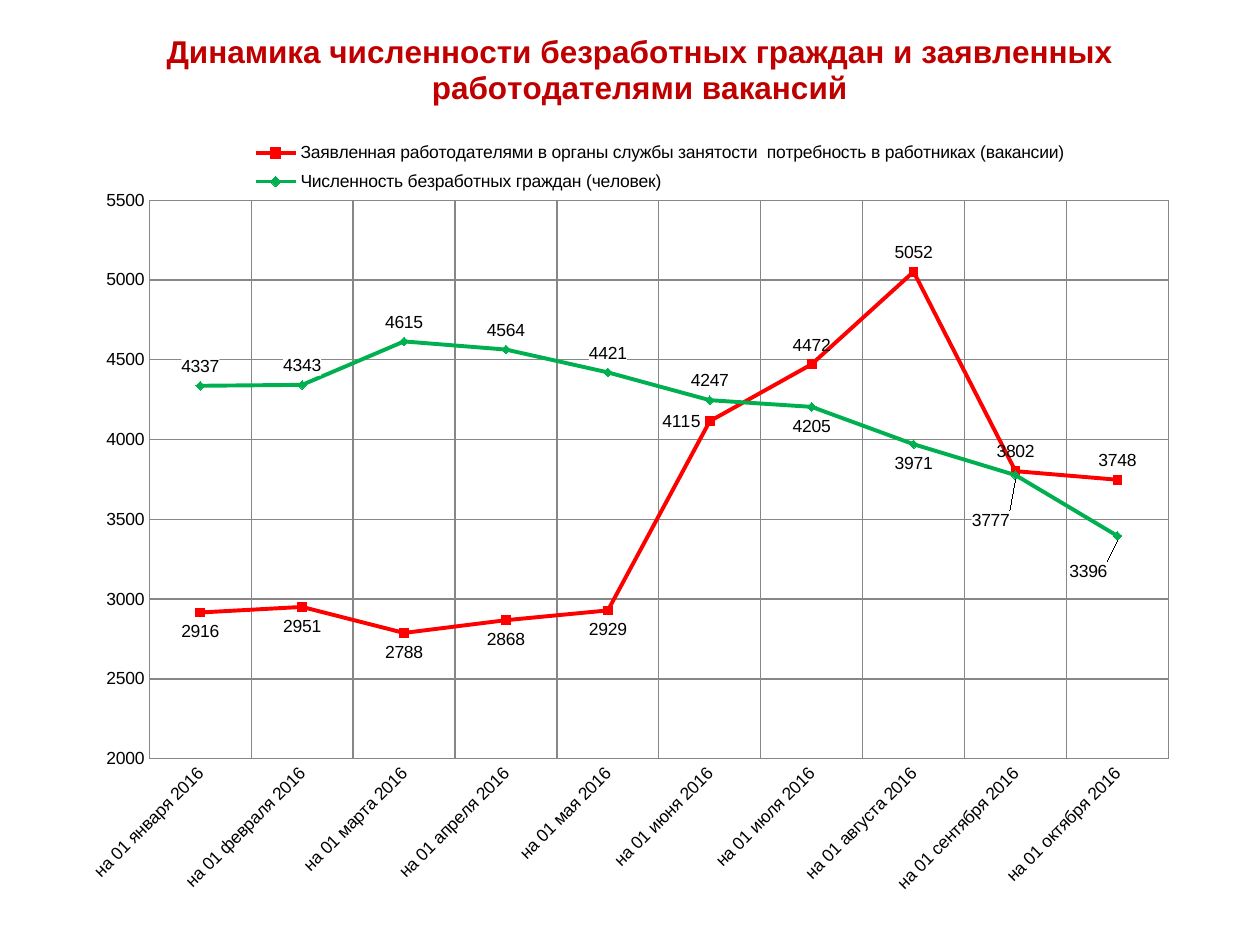
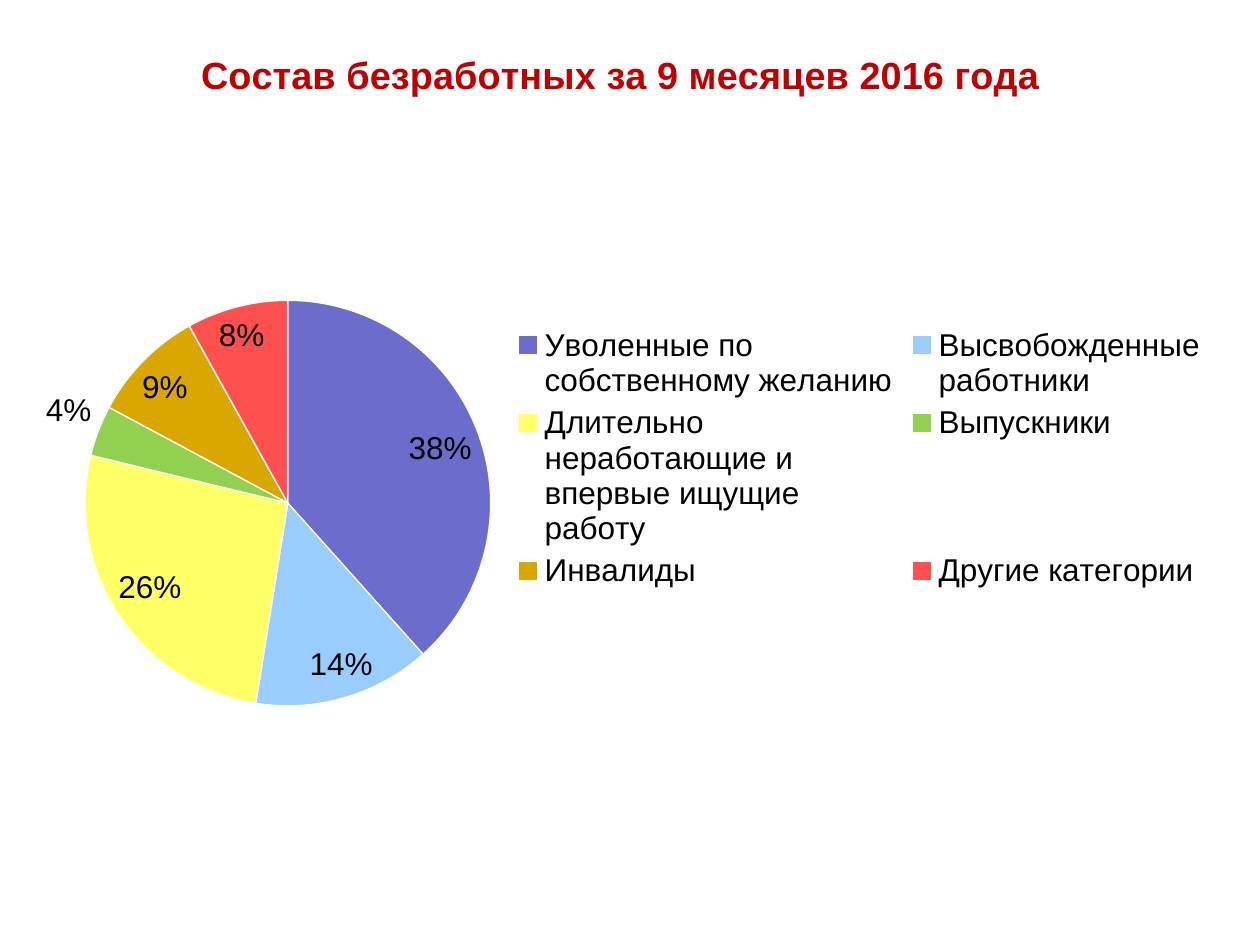
from lxml import etree
from pptx import Presentation
from pptx.chart.data import CategoryChartData
from pptx.dml.color import RGBColor
from pptx.enum.chart import XL_CHART_TYPE, XL_LABEL_POSITION, XL_LEGEND_POSITION, XL_MARKER_STYLE, XL_TICK_MARK
from pptx.oxml import parse_xml
from pptx.oxml.ns import nsdecls, qn
from pptx.util import Pt

LINE, PIE = XL_CHART_TYPE.LINE_MARKERS, XL_CHART_TYPE.PIE
ABOVE, BELOW, LEFT = XL_LABEL_POSITION.ABOVE, XL_LABEL_POSITION.BELOW, XL_LABEL_POSITION.LEFT
BEST_FIT = XL_LABEL_POSITION.BEST_FIT
LEGEND_RIGHT = XL_LEGEND_POSITION.RIGHT
SQUARE, DIAMOND = XL_MARKER_STYLE.SQUARE, XL_MARKER_STYLE.DIAMOND
NO_TICK = XL_TICK_MARK.NONE

FONT = "Arial"
BLACK = RGBColor(0x00, 0x00, 0x00)
WHITE = RGBColor(0xFF, 0xFF, 0xFF)
TITLE_RED = RGBColor(0xC0, 0x00, 0x00)
GRID_GRAY = RGBColor(0x87, 0x87, 0x87)
RED = RGBColor(0xFF, 0x00, 0x00)
GREEN = RGBColor(0x00, 0xB0, 0x50)
PIE_COLORS = [
    RGBColor(0x6C, 0x6C, 0xCC), RGBColor(0x99, 0xCC, 0xFF), RGBColor(0xFF, 0xFF, 0x66),
    RGBColor(0x92, 0xD0, 0x50), RGBColor(0xDA, 0xA6, 0x00), RGBColor(0xFF, 0x50, 0x50),
]
NO_LEADER_LINES = (
    f'<c:extLst {nsdecls("c")}><c:ext uri="{{CE6537A1-D6FC-4f65-9D91-7224C49458BB}}" '
    'xmlns:c15="http://schemas.microsoft.com/office/drawing/2012/chart">'
    '<c15:showLeaderLines val="0"/></c:ext></c:extLst>')

prs = Presentation()
prs.slide_width, prs.slide_height = Pt(720), Pt(540)


def set_layout(parent, index, percents, edge=True, inner=False):
    for old in parent.findall(qn("c:layout")):
        parent.remove(old)
    layout = parse_xml(f"<c:layout {nsdecls('c')}><c:manualLayout/></c:layout>")
    settings = [("layoutTarget", "inner")] if inner else []
    if edge:
        settings += [("xMode", "edge"), ("yMode", "edge")]
    settings += [(key, f"{percent / 100:.4f}") for key, percent in zip("xywh", percents)]
    for tag, value in settings:
        etree.SubElement(layout[0], qn(f"c:{tag}"), val=value)
    parent.insert(index, layout)


def add_chart_slide(kind, bounds, data, size, title_lines, title_size, title_at, plot_box):
    s = prs.slides.add_slide(prs.slide_layouts[6])
    chart = s.shapes.add_chart(kind, *[Pt(v) for v in bounds], data).chart
    chart.font.name, chart.font.size = FONT, Pt(size)
    chart.font.color.rgb = BLACK
    chart.has_title = True
    tf = chart.chart_title.text_frame
    for i, line in enumerate(title_lines):
        p = tf.add_paragraph() if i else tf.paragraphs[0]
        r = p.add_run()
        r.text = line
        r.font.name, r.font.size, r.font.bold = FONT, Pt(title_size), True
        r.font.color.rgb = TITLE_RED
    set_layout(chart.chart_title._element, 1, title_at)
    chart.has_legend = True
    chart.legend.position = LEGEND_RIGHT
    chart.legend.include_in_layout = False
    set_layout(chart._chartSpace.chart.plotArea, 0, plot_box, inner=True)
    return chart


months = ["января", "февраля", "марта", "апреля", "мая", "июня", "июля", "августа", "сентября", "октября"]
data = CategoryChartData()
data.categories = [f"на 01 {month} 2016" for month in months]
data.add_series("Заявленная работодателями в органы службы занятости  потребность в работниках (вакансии)",
                [2916, 2951, 2788, 2868, 2929, 4115, 4472, 5052, 3802, 3748])
data.add_series("Численность безработных граждан (человек)",
                [4337, 4343, 4615, 4564, 4421, 4247, 4205, 3971, 3777, 3396])
chart = add_chart_slide(
    LINE, (11.5, 0, 708.5, 540), data, 10,
    ["Динамика численности безработных граждан и заявленных", "работодателями вакансий"], 18,
    (11.5, 3.05), (10.42, 21.2, 82.2, 59.1))
set_layout(chart.legend._element, 1, (17.6, 14.2, 68, 7))

value_axis, category_axis = chart.value_axis, chart.category_axis
value_axis.minimum_scale, value_axis.maximum_scale, value_axis.major_unit = 2000, 5500, 500
for axis in (value_axis, category_axis):
    axis.major_tick_mark = axis.minor_tick_mark = NO_TICK
    axis.has_major_gridlines = True
    for line in (axis.major_gridlines.format.line, axis.format.line):
        line.color.rgb = GRID_GRAY
        line.width = Pt(0.75)
    axis.tick_labels.font.size = Pt(10)
category_axis._element.find(qn("c:txPr")).find(qn("a:bodyPr")).set("rot", "-2700000")

line_styles = [
    (RED, SQUARE, [BELOW] * 5 + [LEFT] + [ABOVE] * 4),
    (GREEN, DIAMOND, [ABOVE] * 6 + [BELOW] * 4),
]
for series, (color, symbol, positions) in zip(chart.plots[0].series, line_styles):
    series.smooth = False
    series.format.line.color.rgb = color
    series.format.line.width = Pt(2.25)
    series.marker.style, series.marker.size = symbol, 5
    series.marker.format.fill.solid()
    series.marker.format.fill.fore_color.rgb = color
    series.marker.format.line.color.rgb = color
    series.data_labels.show_value = True
    series.data_labels.position = ABOVE
    for i, position in enumerate(positions):
        series.points[i].data_label.position = position
    series.data_labels._element.append(parse_xml(NO_LEADER_LINES))

unemployed_labels = chart.plots[0].series[1].data_labels._element.findall(qn("c:dLbl"))
for label in unemployed_labels:
    for old in label.findall(qn("c:spPr")):
        label.remove(old)
    label.find(qn("c:dLblPos")).addprevious(parse_xml(
        f'<c:spPr {nsdecls("c", "a")}><a:solidFill><a:srgbClr val="{WHITE}"/></a:solidFill></c:spPr>'))
set_layout(unemployed_labels[8], 1, (-2, 2.8), edge=False)
set_layout(unemployed_labels[9], 1, (-2.35, 1.7), edge=False)

pie_title = "Состав безработных за 9 месяцев 2016 года"
data = CategoryChartData()
data.categories = ["Уволенные по собственному желанию", "Высвобожденные работники",
                   "Длительно неработающие и впервые ищущие работу", "Выпускники",
                   "Инвалиды", "Другие категории"]
data.add_series(pie_title, [38, 14, 26, 4, 9, 8])
chart = add_chart_slide(
    PIE, (11.5, 11.5, 686, 500.5), data, 18, [pie_title], 21.6,
    (14.5, 2.75), (5.4, 32, 33.8, 46.3))

plot = chart.plots[0]
plot.vary_by_categories = True
for i, color in enumerate(PIE_COLORS):
    slice_format = plot.series[0].points[i].format
    slice_format.fill.solid()
    slice_format.fill.fore_color.rgb = color
    slice_format.line.color.rgb = WHITE
    slice_format.line.width = Pt(0.75)
labels = plot.series[0].data_labels
labels.show_percentage, labels.show_value = True, False
labels.number_format, labels.number_format_is_linked = "0%", False
labels.position = BEST_FIT

prs.save("out.pptx")
